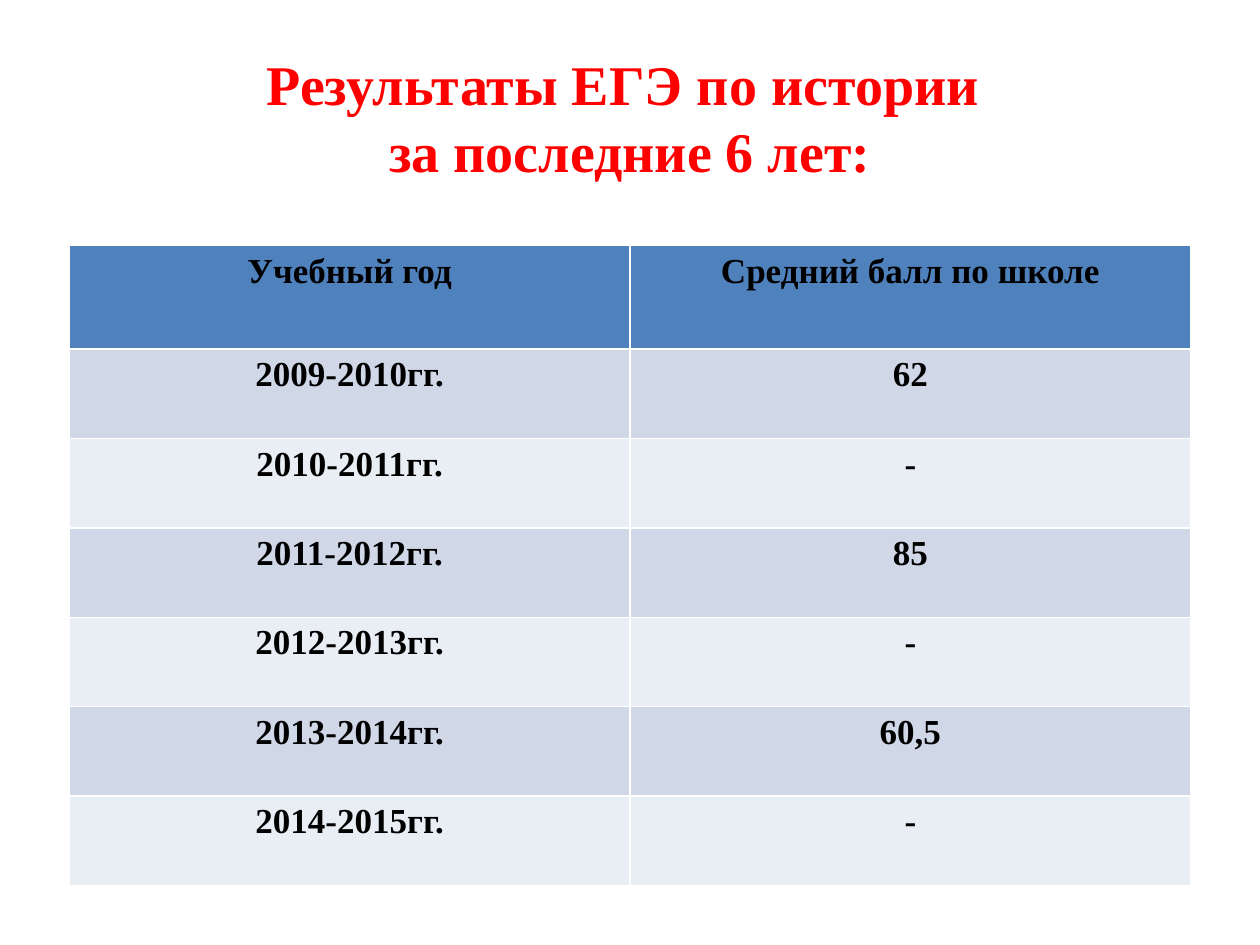
from pptx import Presentation
from pptx.dml.color import RGBColor
from pptx.enum.text import MSO_ANCHOR, PP_ALIGN
from pptx.util import Inches, Pt

CENTER = PP_ALIGN.CENTER
MIDDLE = MSO_ANCHOR.MIDDLE
RED = RGBColor(0xFF, 0x00, 0x00)
BLACK = RGBColor(0x00, 0x00, 0x00)
HEADER = RGBColor(0x4F, 0x81, 0xBD)
BANDS = (RGBColor(0xE9, 0xED, 0xF4), RGBColor(0xD0, 0xD8, 0xE8))

WIDTH, HEIGHT = Inches(10), Inches(7.5)
TITLE_FONT = {"name": "Times New Roman", "size": Pt(32), "bold": True}
CELL_FONT = {"name": "Times New Roman", "size": Pt(20), "bold": True}

TITLE = "Результаты ЕГЭ по истории \vза последние 6 лет:"
RESULTS = [
    ("Учебный год", "Средний балл по школе"),
    ("2009-2010гг.", "62"),
    ("2010-2011гг.", "-"),
    ("2011-2012гг.", "85"),
    ("2012-2013гг.", "-"),
    ("2013-2014гг.", "60,5"),
    ("2014-2015гг.", "-"),
]


def write(tf, text, font, color):
    p = tf.paragraphs[0]
    p.text = text
    p.alignment = CENTER
    for r in p.runs:
        for name, value in font.items():
            setattr(r.font, name, value)
        r.font.color.rgb = color


def add_title(s, text):
    sp = s.shapes.add_textbox(
        int(WIDTH * 0.05), int(HEIGHT * 0.04), int(WIDTH * 0.9), Inches(1.25)
    )
    tf = sp.text_frame
    tf.word_wrap = True
    tf.vertical_anchor = MIDDLE
    write(tf, text, TITLE_FONT, RED)


def add_results(s, rows):
    header_height, row_height, column_width = Inches(0.82), Inches(0.71), Inches(4.45)
    columns = len(rows[0])
    table = s.shapes.add_table(
        len(rows), columns, Inches(0.55), Inches(1.95),
        column_width * columns, header_height + row_height * (len(rows) - 1),
    ).table
    for column in table.columns:
        column.width = column_width
    for i, values in enumerate(rows):
        table.rows[i].height = row_height if i else header_height
        for j, value in enumerate(values):
            cell = table.cell(i, j)
            cell.fill.solid()
            cell.fill.fore_color.rgb = BANDS[i % 2] if i else HEADER
            write(cell.text_frame, value, CELL_FONT, BLACK)


def main():
    prs = Presentation()
    prs.slide_width, prs.slide_height = WIDTH, HEIGHT
    s = prs.slides.add_slide(prs.slide_layouts[6])
    add_title(s, TITLE)
    add_results(s, RESULTS)
    prs.save("out.pptx")


if __name__ == "__main__":
    main()
